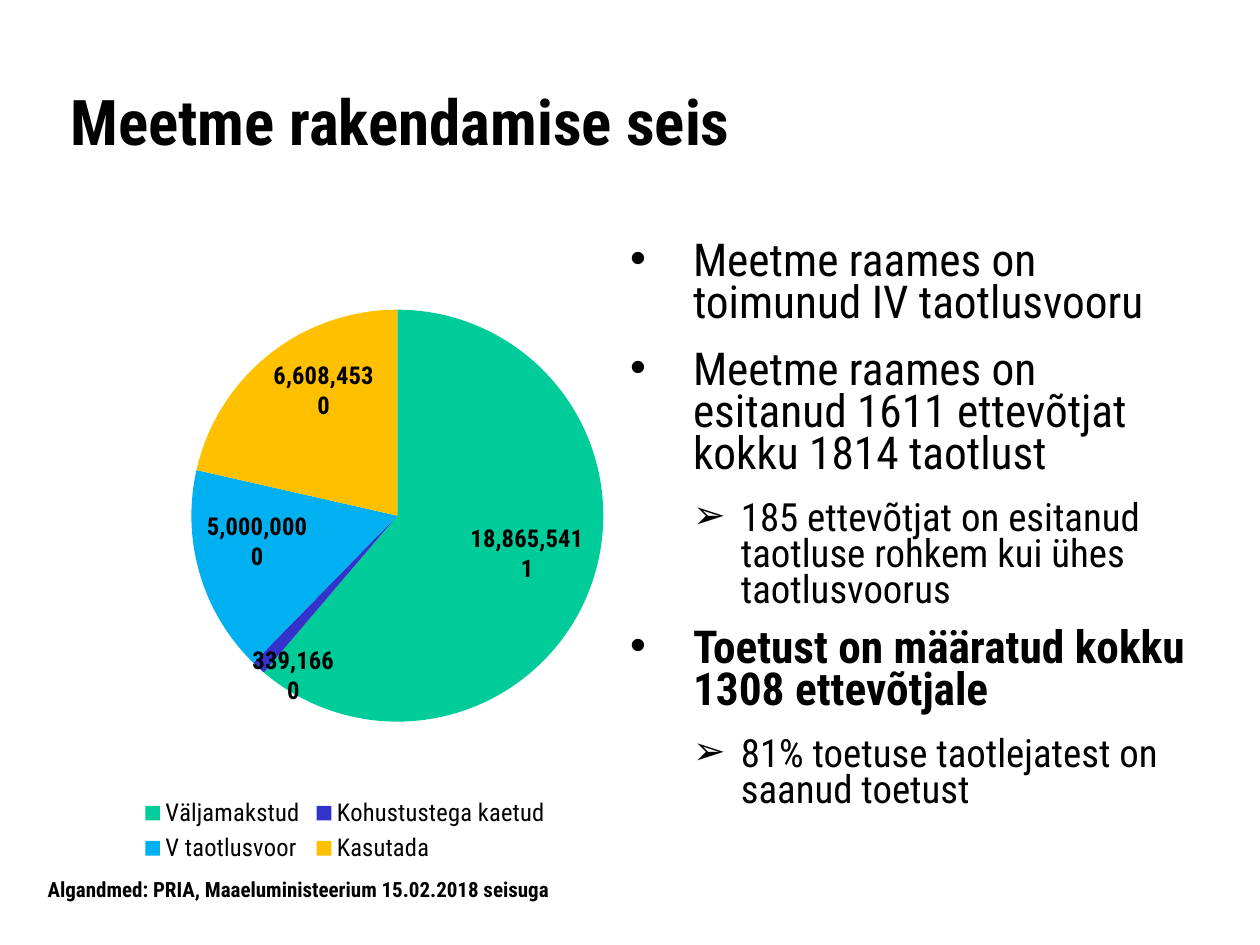
from copy import deepcopy

from lxml.etree import SubElement
from pptx import Presentation
from pptx.chart.data import CategoryChartData
from pptx.dml.color import RGBColor
from pptx.enum.chart import XL_CHART_TYPE, XL_LABEL_POSITION, XL_LEGEND_POSITION
from pptx.enum.text import MSO_ANCHOR
from pptx.oxml import parse_xml
from pptx.oxml.ns import nsdecls, qn
from pptx.util import Inches, Pt

FONT = "Roboto Condensed"
BLACK = "000000"
SLICES = [
    ("Väljamakstud", 18865541, "00CC99"),
    ("Kohustustega kaetud", 339166, "3333CC"),
    ("V taotlusvoor", 5000000, "00B0F0"),
    ("Kasutada", 6608453, "FFC000"),
]
# (level, bold, text)
POINTS = [
    (0, False, "Meetme raames on toimunud IV taotlusvooru"),
    (0, False, "Meetme raames on esitanud 1611 ettevõtjat kokku 1814 taotlust"),
    (1, False, "185 ettevõtjat on esitanud taotluse rohkem kui ühes taotlusvoorus"),
    (0, True, "Toetust on määratud kokku 1308 ettevõtjale"),
    (1, False, "81% toetuse taotlejatest on saanud toetust"),
]
# level: (size, left margin, hanging indent, space after, bullet)
LEVELS = {0: (25.9, 0.5, 0.5, 14.2, "•"), 1: (22.2, 0.88, 0.38, 11.5, "➢")}


def rgb(hex_color):
    return RGBColor.from_string(hex_color)


def style_font(font, size, bold=False):
    font.name, font.size, font.bold = FONT, Pt(size), bold
    font.color.rgb = rgb(BLACK)


def add_box(slide, box, margins=(0, 0), wrap=True):
    """Add a text box; margins are (horizontal, vertical) in inches."""
    tf = slide.shapes.add_textbox(*map(Inches, box)).text_frame
    tf.word_wrap = wrap
    tf.margin_left = tf.margin_right = Inches(margins[0])
    tf.margin_top = tf.margin_bottom = Inches(margins[1])
    return tf


def add_run(p, text, size, bold=False):
    r = p.add_run()
    r.text = text
    style_font(r.font, size, bold)


def set_bullet(p, char, margin, hanging):
    pPr = p._p.get_or_add_pPr()
    pPr.set("marL", str(Inches(margin)))
    pPr.set("indent", str(-Inches(hanging)))
    color = SubElement(pPr, qn("a:buClr"))
    SubElement(color, qn("a:srgbClr"), val=BLACK)
    SubElement(pPr, qn("a:buFont"), typeface="Arial")
    SubElement(pPr, qn("a:buChar"), char=char)


def add_points(slide, box):
    tf = add_box(slide, box)
    for i, (level, bold, text) in enumerate(POINTS):
        size, margin, hanging, after, char = LEVELS[level]
        p = tf.add_paragraph() if i else tf.paragraphs[0]
        p.level, p.line_spacing, p.space_after = level, 0.77, Pt(after)
        set_bullet(p, char, margin, hanging)
        add_run(p, text, size, bold)


def manual_layout(target="", mode="edge", **shares):
    """Build a c:layout from shares of the chart's size."""
    inner = f'<c:layoutTarget val="{target}"/>' if target else ""
    if mode == "edge":
        inner += '<c:xMode val="edge"/><c:yMode val="edge"/>'
    inner += "".join(f'<c:{k} val="{v}"/>' for k, v in shares.items())
    return parse_xml(f"<c:layout {nsdecls('c')}><c:manualLayout>{inner}"
                     "</c:manualLayout></c:layout>")


def set_layout(parent, index, layout):
    for old in parent.findall(qn("c:layout")):
        parent.remove(old)
    parent.insert(index, layout)


def add_labels(series):
    labels = series.data_labels
    labels.show_value = labels.show_percentage = True
    labels.number_format, labels.number_format_is_linked = "#,##0", False
    labels.position = XL_LABEL_POSITION.INSIDE_END
    style_font(labels.font, 14, True)
    dLbls = labels._element
    separator = parse_xml(f"<c:separator {nsdecls('c')}>\n</c:separator>")
    dLbls.find(qn("c:showBubbleSize")).addnext(separator)

    # The narrow slice's label is moved down, clear of its neighbours.
    shared = [deepcopy(el) for el in dLbls if el.tag != qn("c:showLeaderLines")]
    moved = parse_xml(f'<c:dLbl {nsdecls("c")}><c:idx val="1"/></c:dLbl>')
    moved.append(manual_layout(mode="factor", x=-0.02, y=0.07))
    moved.extend(shared)
    dLbls.insert(0, moved)


def add_pie(slide, box):
    names, values, colors = zip(*SLICES)
    data = CategoryChartData(number_format="#,##0")
    data.categories = names
    data.add_series("Series 1", values)
    chart = slide.shapes.add_chart(
        XL_CHART_TYPE.PIE, *map(Inches, box), data).chart
    chart.has_title = False
    style_font(chart.font, 18)
    plot = chart.plots[0]
    plot.vary_by_categories = True
    series = plot.series[0]
    for i, color in enumerate(colors):
        fmt = series.points[i].format
        fmt.fill.solid()
        fmt.fill.fore_color.rgb = rgb(color)
        fmt.line.fill.background()
    add_labels(series)

    chart.has_legend = True
    legend = chart.legend
    legend.position = XL_LEGEND_POSITION.BOTTOM
    legend.include_in_layout = False
    style_font(legend.font, 14)
    set_layout(legend._element, 1,
               manual_layout(x=0.12, y=0.88, w=0.76, h=0.12))
    plot_area = chart._chartSpace.chart.plotArea
    set_layout(plot_area, 0,
               manual_layout("inner", x=0.22, y=0.1, w=0.75, h=0.67))


def main():
    prs = Presentation()
    prs.slide_width, prs.slide_height = Inches(10), Inches(7.5)
    slide = prs.slides.add_slide(prs.slide_layouts[6])

    title = add_box(slide, (0.56, 0.33, 8.84, 1.38))
    title.vertical_anchor = MSO_ANCHOR.MIDDLE
    title.paragraphs[0].line_spacing = 0.77
    add_run(title.paragraphs[0], "Meetme rakendamise seis", 36, True)

    add_pie(slide, (0.56, 1.94, 4.36, 4.95))
    add_points(slide, (5, 1.93, 4.48, 4.95))

    source = add_box(slide, (0.28, 6.91, 4.23, 0.3), (0.1, 0.05), wrap=False)
    add_run(source.paragraphs[0],
            "Algandmed: PRIA, Maaeluministeerium 15.02.2018 seisuga", 12, True)
    prs.save("out.pptx")


if __name__ == "__main__":
    main()
